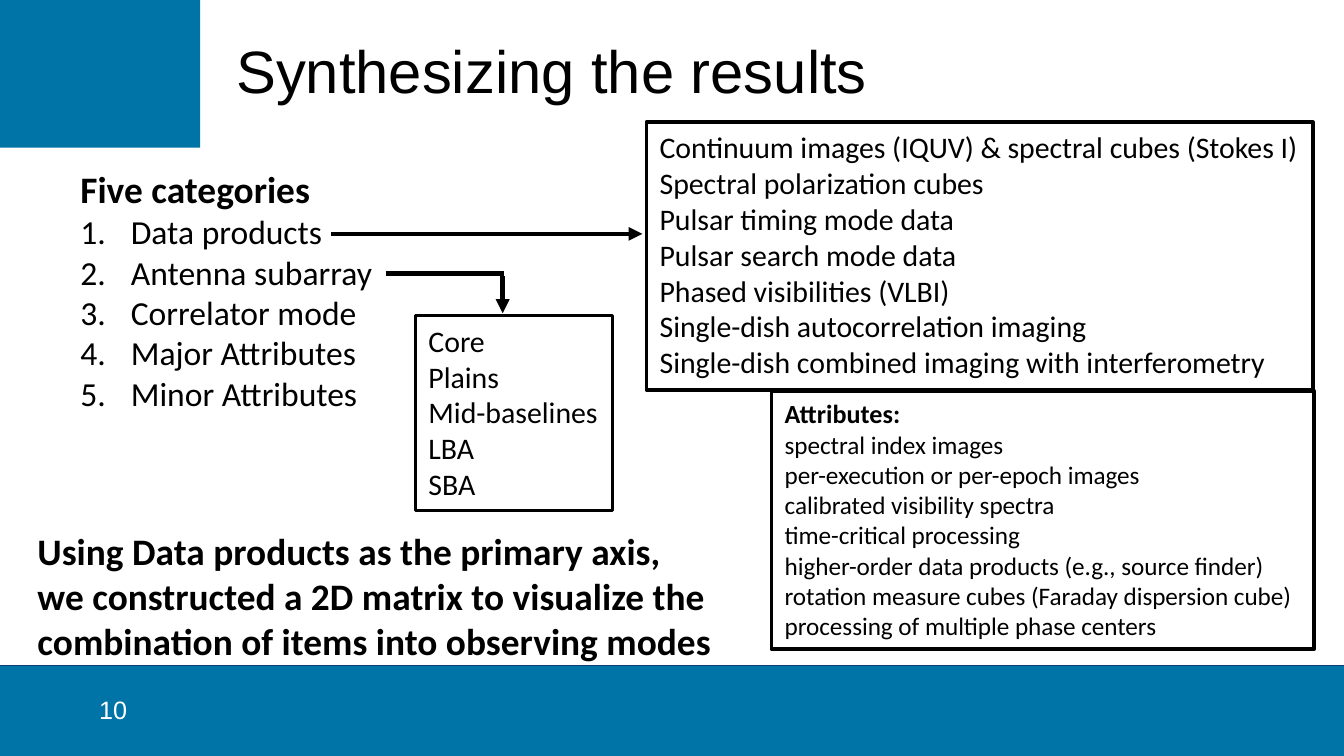
from lxml import etree
from pptx import Presentation
from pptx import util as u
from pptx.dml.color import RGBColor
from pptx.enum import shapes, text
from pptx.oxml.ns import qn

Pt = u.Pt
BLUE, BLACK, WHITE = "0074A7", "000000", "FFFFFF"


def color(value):
    return RGBColor.from_string(value)


def write(shape, lines, size, font="Calibri", ink=BLACK, wrap=True, heading=None, numbered=False):
    frame = shape.text_frame
    frame.word_wrap = wrap
    for index, line in enumerate(lines):
        paragraph = frame.paragraphs[0] if index == 0 else frame.add_paragraph()
        paragraph.text = line
        paragraph.alignment = text.PP_ALIGN.LEFT
        is_heading = heading is not None and index == 0
        if numbered and not is_heading:
            properties = paragraph._p.get_or_add_pPr()
            properties.set("marL", str(Pt(27)))
            properties.set("indent", str(-Pt(27)))
            etree.SubElement(properties, qn("a:buFont"), typeface="+mj-lt")
            etree.SubElement(properties, qn("a:buAutoNum"), type="arabicPeriod")
        paragraph.font.name = font
        paragraph.font.size = Pt(heading if is_heading else size)
        paragraph.font.bold = is_heading
        paragraph.font.color.rgb = color(ink)


presentation = Presentation()
presentation.slide_width = Pt(720)
presentation.slide_height = Pt(405)
slide = presentation.slides.add_slide(presentation.slide_layouts[6])

for left, top, width, height in [(0, 356.4, 720, 48.6), (0, 0, 107.3, 79.2)]:
    band = slide.shapes.add_shape(
        shapes.MSO_SHAPE.RECTANGLE, Pt(left), Pt(top), Pt(width), Pt(height))
    band.shadow.inherit = False
    band.fill.solid()
    band.fill.fore_color.rgb = color(BLUE)
    band.line.fill.background()

title = slide.shapes.add_textbox(Pt(119.5), Pt(0.7), Pt(551.5), Pt(78.5))
write(title, ["Synthesizing the results"], 32, "Arial")
title.text_frame.vertical_anchor = text.MSO_ANCHOR.MIDDLE
title.text_frame.paragraphs[0].line_spacing = 0.9

page_number = slide.shapes.add_textbox(Pt(46), Pt(368.6), Pt(32.4), Pt(26))
write(page_number, ["10"], 13.5, "Arial", WHITE)

categories = slide.shapes.add_textbox(Pt(36), Pt(85.7), Pt(220), Pt(162.7))
write(categories, ["Five categories", "Data products", "Antenna subarray", "Correlator mode",
                   "Major Attributes", "Minor Attributes"], 18, heading=20, numbered=True)

summary = slide.shapes.add_textbox(Pt(13), Pt(279.4), Pt(377.3), Pt(80))
write(summary, ["Using Data products as the primary axis, we constructed a 2D matrix to visualize "
                "the combination of items into observing modes"], 20, heading=20)

boxes = [
    (346.3, 65.5, 357.1, 143.3, 2, 16, None, [
        "Continuum images (IQUV) & spectral cubes (Stokes I)",
        "Spectral polarization cubes",
        "Pulsar timing mode data",
        "Pulsar search mode data",
        "Phased visibilities (VLBI)",
        "Single-dish autocorrelation imaging",
        "Single-dish combined imaging with interferometry"]),
    (222.5, 169.2, 105.8, 104.4, 1.75, 16, None, [
        "Core", "Plains", "Mid-baselines", "LBA", "SBA"]),
    (413.3, 209.5, 290.9, 138.2, 2, 13.5, 14, [
        "Attributes:",
        "spectral index images",
        "per-execution or per-epoch images",
        "calibrated visibility spectra",
        "time-critical processing",
        "higher-order data products (e.g., source finder)",
        "rotation measure cubes (Faraday dispersion cube)",
        "processing of multiple phase centers"]),
]
for left, top, width, height, border, size, heading, lines in boxes:
    box = slide.shapes.add_shape(
        shapes.MSO_SHAPE.RECTANGLE, Pt(left), Pt(top), Pt(width), Pt(height))
    box.shadow.inherit = False
    box.fill.background()
    box.line.color.rgb = color(BLACK)
    box.line.width = Pt(border)
    write(box, lines, size, wrap=False, heading=heading)
    box.text_frame.vertical_anchor = text.MSO_ANCHOR.TOP

connectors = [
    (720, 356.4, 0, 356.4, "163B71", 0.5, False),
    (177.1, 125.3, 344.2, 125.3, BLACK, 2.5, True),
    (206.6, 146.7, 270, 146.7, BLACK, 2.5, False),
    (269.3, 147.6, 269.3, 167.8, BLACK, 2.5, True),
]
for start_x, start_y, end_x, end_y, ink, width, arrow in connectors:
    connector = slide.shapes.add_connector(
        shapes.MSO_CONNECTOR.STRAIGHT, Pt(start_x), Pt(start_y), Pt(end_x), Pt(end_y))
    connector.line.color.rgb = color(ink)
    connector.line.width = Pt(width)
    if arrow:
        etree.SubElement(connector.line._get_or_add_ln(), qn("a:tailEnd"), type="triangle")
    etree.SubElement(connector._element.spPr, qn("a:effectLst"))

presentation.save("out.pptx")
